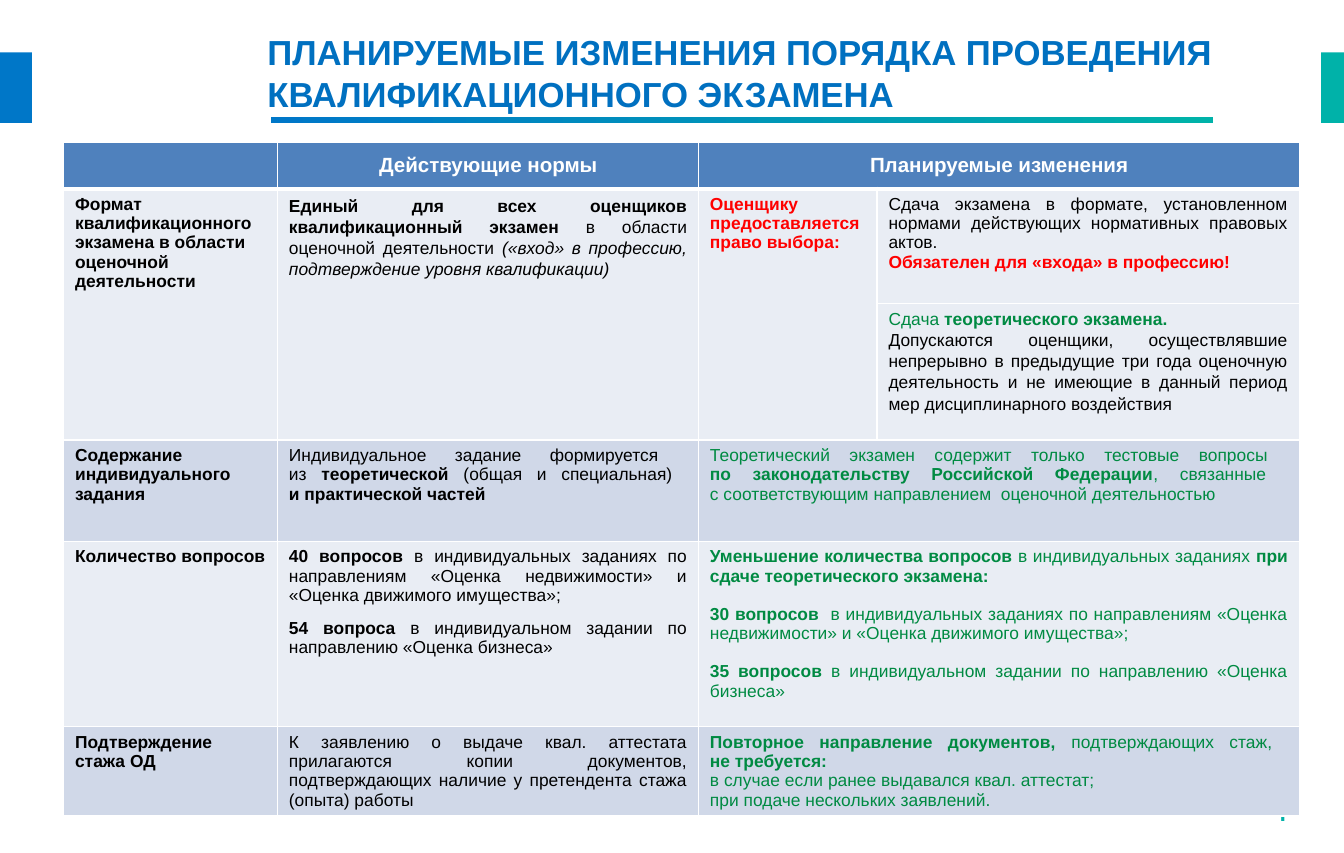
from lxml import etree
from pptx import Presentation
from pptx.dml.color import RGBColor
from pptx.enum.shapes import MSO_SHAPE
from pptx.enum.text import MSO_ANCHOR, PP_ALIGN
from pptx.oxml.ns import qn
from pptx.util import Inches, Pt

LEFT, CENTER, RIGHT, JUSTIFY = PP_ALIGN.LEFT, PP_ALIGN.CENTER, PP_ALIGN.RIGHT, PP_ALIGN.JUSTIFY
MIDDLE = MSO_ANCHOR.MIDDLE
RECTANGLE = MSO_SHAPE.RECTANGLE

FONT = "Arial"
BLUE, TEAL, TITLE_BLUE = "0077C8", "00B2A9", "0070C0"
HEADER, LIGHT, DARK = "4F81BD", "E9EDF4", "D0D8E8"
BLACK, WHITE, RED, GREEN = "000000", "FFFFFF", "FF0000", "008A42"

SLIDE_WIDTH = 11 + 13 / 16
COLUMN_WIDTHS = [1.88, 3.7, 1.57, 3.71]
ROW_HEIGHTS = [0.41, 1.01, 1.2, 0.89, 1.63, 0.77]
ROW_FILLS = [HEADER, LIGHT, LIGHT, DARK, LIGHT, DARK]
MERGES = [(0, 2, 0, 3), (1, 0, 2, 0), (1, 1, 2, 1), (1, 2, 2, 2),
          (3, 2, 3, 3), (4, 2, 4, 3), (5, 2, 5, 3)]

ROW_TITLES = {
    1: "Формат квалификационного экзамена в области оценочной деятельности",
    3: "Содержание индивидуального задания",
    4: "Количество вопросов",
    5: "Подтверждение стажа ОД",
}

# (row, column): paragraphs of (text, colour, line spacing, space before in points)
CELLS = {
    (1, 1): [("*Единый для всех оценщиков квалификационный экзамен* в области оценочной "
              "деятельности _(«вход» в профессию, подтверждение уровня квалификации)_",
              BLACK, 1.1, 0)],
    (1, 2): [("*Оценщику предоставляется право выбора:*", RED, 1, 0)],
    (1, 3): [("Сдача экзамена в формате, установленном нормами действующих нормативных "
              "правовых актов. ", BLACK, 1, 0),
             ("*Обязателен для «входа» в профессию!*", RED, 1, 0)],
    (2, 3): [("Сдача* теоретического экзамена.*", GREEN, 1, 0),
             ("Допускаются оценщики, осуществлявшие непрерывно в предыдущие три года "
              "оценочную деятельность и не имеющие в данный период мер дисциплинарного "
              "воздействия", BLACK, 1.1, 0)],
    (3, 1): [("Индивидуальное задание формируется \nиз *теоретической *(общая и "
              "специальная) \n*и практической частей*", BLACK, 1, 0)],
    (3, 2): [("Теоретический экзамен содержит только тестовые вопросы \n*по "
              "законодательству Российской Федерации*, связанные \nс соответствующим "
              "направлением  оценочной деятельностью", GREEN, 1, 0)],
    (4, 1): [("*40 вопросов *в индивидуальных заданиях по направлениям «Оценка "
              "недвижимости» и «Оценка движимого имущества»;", BLACK, 1, 0),
             ("*54 вопроса *в индивидуальном задании по направлению «Оценка бизнеса»",
              BLACK, 1, 8.5)],
    (4, 2): [("*Уменьшение количества вопросов *в индивидуальных заданиях *при сдаче "
              "теоретического экзамена:*", GREEN, 1, 0),
             ("*30 вопросов  *в индивидуальных заданиях по направлениям «Оценка "
              "недвижимости» и «Оценка движимого имущества»;", GREEN, 1, 12),
             ("*35 вопросов *в индивидуальном задании по направлению «Оценка бизнеса»",
              GREEN, 1, 12)],
    (5, 1): [("К заявлению о выдаче квал. аттестата прилагаются копии документов, "
              "подтверждающих наличие у претендента стажа (опыта) работы", BLACK, 1, 0)],
    (5, 2): [("*Повторное направление документов,* подтверждающих стаж, \n"
              "*не требуется:*", GREEN, 1, 0),
             ("в случае если ранее выдавался квал. аттестат;", GREEN, 1, 0),
             ("при подаче нескольких заявлений.", GREEN, 1, 0)],
}


def rgb(color):
    return RGBColor.from_string(color)


def set_font(paragraph, size, color, bold=None):
    font = paragraph.font
    font.name, font.size, font.bold = FONT, Pt(size), bold
    font.color.rgb = rgb(color)


def add_runs(paragraph, text):
    """Write text where *...* is bold, _..._ is italic and a newline is a line break."""
    for bold_index, part in enumerate(text.split("*")):
        for italic_index, piece in enumerate(part.split("_")):
            for line_index, line in enumerate(piece.split("\n")):
                if line_index:
                    paragraph.add_line_break()
                if line:
                    run = paragraph.add_run()
                    run.text = line
                    if bold_index % 2:
                        run.font.bold = True
                    if italic_index % 2:
                        run.font.italic = True


def write_cell(cell, paragraphs, size=11, align=JUSTIFY):
    frame = cell.text_frame
    for index, (text, color, spacing, before) in enumerate(paragraphs):
        paragraph = frame.add_paragraph() if index else frame.paragraphs[0]
        paragraph.alignment = align
        paragraph.line_spacing = spacing
        if before:
            paragraph.space_before = Pt(before)
        set_font(paragraph, size, color)
        add_runs(paragraph, text)


def set_borders(cell, bottom):
    properties = cell._tc.get_or_add_tcPr()
    for index, (side, width) in enumerate([("L", 1), ("R", 1), ("T", 1), ("B", bottom)]):
        line = etree.Element(qn(f"a:ln{side}"), w=str(Pt(width)))
        fill = etree.SubElement(line, qn("a:solidFill"))
        etree.SubElement(fill, qn("a:srgbClr"), val=WHITE)
        properties.insert(index, line)


def add_bar(slide, left, top, width, height, color, end_color=None):
    """Add a borderless bar, with a left-to-right gradient if end_color is given."""
    bar = slide.shapes.add_shape(RECTANGLE, Inches(left), Inches(top),
                                 Inches(width), Inches(height))
    bar.shadow.inherit = False
    bar.line.fill.background()
    if end_color:
        bar.fill.gradient()
        bar.fill.gradient_angle = 0
        for stop, stop_color in zip(bar.fill.gradient_stops, (color, end_color)):
            stop.color.rgb = rgb(stop_color)
    else:
        bar.fill.solid()
        bar.fill.fore_color.rgb = rgb(color)


def add_text(slide, left, top, width, height, text, size, color,
             bold=False, align=LEFT, margin=0.0):
    box = slide.shapes.add_textbox(Inches(left), Inches(top), Inches(width), Inches(height))
    frame = box.text_frame
    frame.word_wrap = True
    frame.margin_left = frame.margin_right = Inches(margin)
    frame.margin_top = frame.margin_bottom = Inches(margin / 2)
    paragraph = frame.paragraphs[0]
    paragraph.text = text
    paragraph.alignment = align
    set_font(paragraph, size, color, bold)


def add_comparison_table(slide):
    table = slide.shapes.add_table(
        len(ROW_HEIGHTS), len(COLUMN_WIDTHS), Inches(0.56), Inches(1.25),
        Inches(sum(COLUMN_WIDTHS)), Inches(sum(ROW_HEIGHTS))).table
    for column, width in zip(table.columns, COLUMN_WIDTHS):
        column.width = Inches(width)
    for index, (row, height) in enumerate(zip(table.rows, ROW_HEIGHTS)):
        row.height = Inches(height)
        for cell in row.cells:
            cell.margin_bottom = 0 if index == len(ROW_HEIGHTS) - 1 else Inches(0.05)
            cell.fill.solid()
            cell.fill.fore_color.rgb = rgb(ROW_FILLS[index])
            set_borders(cell, bottom=1 if index else 3)
    for top, left, bottom, right in MERGES:
        table.cell(top, left).merge(table.cell(bottom, right))

    for column, heading in ((1, "Действующие нормы"), (2, "Планируемые изменения")):
        cell = table.cell(0, column)
        cell.vertical_anchor = MIDDLE
        write_cell(cell, [(f"*{heading}*", WHITE, 1, 0)], 13, CENTER)
    for row, title in ROW_TITLES.items():
        write_cell(table.cell(row, 0), [(f"*{title}*", BLACK, 1, 0)], align=LEFT)
    for (row, column), paragraphs in CELLS.items():
        write_cell(table.cell(row, column), paragraphs)


def main():
    presentation = Presentation()
    presentation.slide_width = Inches(SLIDE_WIDTH)
    presentation.slide_height = Inches(7.5)
    slide = presentation.slides.add_slide(presentation.slide_layouts[6])
    add_bar(slide, 0, 0.46, 0.28, 0.62, BLUE)
    add_bar(slide, SLIDE_WIDTH - 0.2, 0.46, 0.2, 0.62, TEAL)
    add_bar(slide, 2.38, 1.03, 8.28, 0.05, BLUE, TEAL)
    add_text(slide, 2.35, 0.27, 8.78, 0.55,
             "ПЛАНИРУЕМЫЕ ИЗМЕНЕНИЯ ПОРЯДКА ПРОВЕДЕНИЯ КВАЛИФИКАЦИОННОГО ЭКЗАМЕНА",
             22, TITLE_BLUE, bold=True)
    add_text(slide, 10.45, 6.84, 0.98, 0.4, "4", 24, TEAL, align=RIGHT, margin=0.1)
    add_comparison_table(slide)
    presentation.save("out.pptx")


if __name__ == "__main__":
    main()
